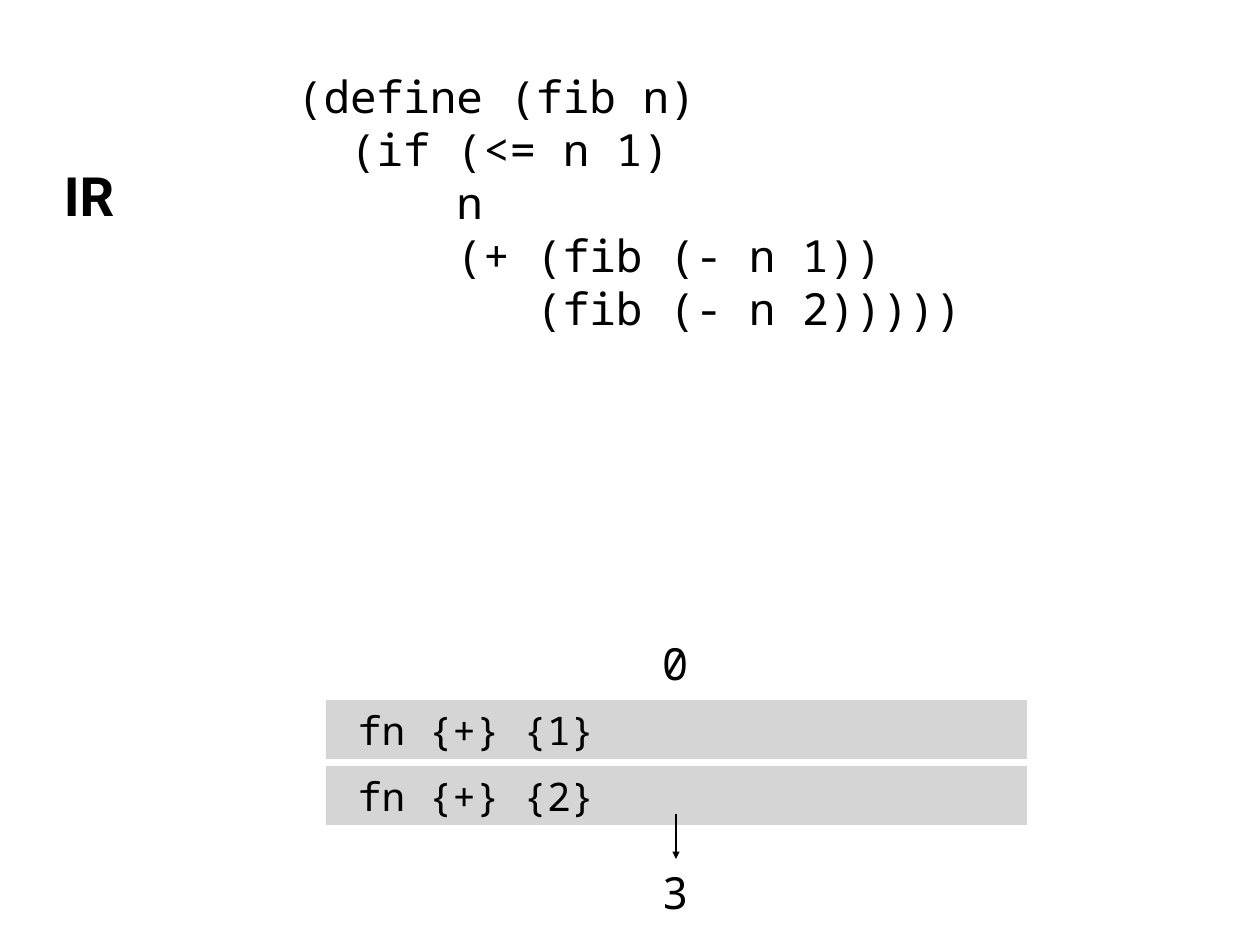
"""Build the slide that shows the IR of a Fibonacci function."""
from lxml.etree import SubElement
from pptx import Presentation
from pptx.dml.color import RGBColor
from pptx.enum.shapes import MSO_CONNECTOR as Connector, MSO_SHAPE as Shape
from pptx.enum.text import MSO_ANCHOR as Anchor, MSO_AUTO_SIZE as AutoSize, PP_ALIGN as Align
from pptx.oxml.ns import qn
from pptx.util import Pt

SCALE = 10320
COLOURS = {"ink": "000000", "bar": "D6D5D5", "page": "FFFFFF"}
MONO = "Noto Sans Mono"
INSET = 5
BAR_LEFT, BAR_TOP, BAR_WIDTH, BAR_HEIGHT, BAR_STEP = 326, 700, 701, 59, 66
CODE = """(define (fib n)
  (if (<= n 1)
      n
      (+ (fib (- n 1))
         (fib (- n 2)))))"""
INSTRUCTIONS = ["fn {+} {1}", "fn {+} {2}"]
ARGUMENTS = [("0", 633), ("3", 862)]


def px(*lengths):
    """Turn pixel lengths into EMU."""
    return [length * SCALE for length in lengths]


def colour(name):
    """Return a named colour."""
    return RGBColor.from_string(COLOURS[name])


def set_all(target, values):
    """Set attributes of an object from a dict."""
    for name, value in values.items():
        setattr(target, name, value)


def add_text(page, text, place, size, font=MONO, bold=False, anchor=Anchor.MIDDLE, align=Align.LEFT):
    """Add an unwrapped text box with one paragraph per line."""
    box = page.shapes.add_textbox(*px(*place))
    frame = box.text_frame
    set_all(frame, {"word_wrap": False, "auto_size": AutoSize.SHAPE_TO_FIT_TEXT,
                    "vertical_anchor": anchor})
    set_all(frame, {f"margin_{side}": INSET * SCALE for side in ("left", "top", "right", "bottom")})
    frame.text = text
    for para in frame.paragraphs:
        para.alignment = align
        for span in para.runs:
            set_all(span.font, {"name": font, "size": Pt(size), "bold": bold})
            span.font.color.rgb = colour("ink")


def add_bar(page, top, text):
    """Add a grey instruction bar and its code."""
    bar = page.shapes.add_shape(Shape.RECTANGLE, *px(BAR_LEFT, top, BAR_WIDTH, BAR_HEIGHT))
    bar.shadow.inherit = False
    bar.fill.solid()
    bar.fill.fore_color.rgb = colour("bar")
    bar.line.fill.background()
    add_text(page, text, (BAR_LEFT + 27, top + 3, 247, 54), 32)


def add_arrow(page, start, end):
    """Add a straight arrow without a shadow."""
    arrow = page.shapes.add_connector(Connector.STRAIGHT, *px(*start, *end))
    arrow.line.width = Pt(2)
    arrow.line.color.rgb = colour("ink")
    SubElement(arrow.line._get_or_add_ln(), qn("a:tailEnd"), type="triangle")
    SubElement(arrow._element.spPr, qn("a:effectLst"))


def main():
    """Build and save the deck."""
    deck = Presentation()
    set_all(deck, dict(zip(("slide_width", "slide_height"), px(1260, 945))))
    page = deck.slides.add_slide(deck.slide_layouts[6])
    page.background.fill.solid()
    page.background.fill.fore_color.rgb = colour("page")
    add_text(page, CODE, (292, 64, 676, 262), 36, anchor=Anchor.TOP)
    add_text(page, "IR", (56, 158, 66, 74), 44, font="Roboto", bold=True, align=Align.CENTER)
    for index, instruction in enumerate(INSTRUCTIONS):
        add_bar(page, BAR_TOP + index * BAR_STEP, instruction)
    for argument, top in ARGUMENTS:
        add_text(page, argument, (657, top, 38, 60), 36)
    add_arrow(page, (676, 814), (676, 859))
    deck.save("out.pptx")


if __name__ == "__main__":
    main()
